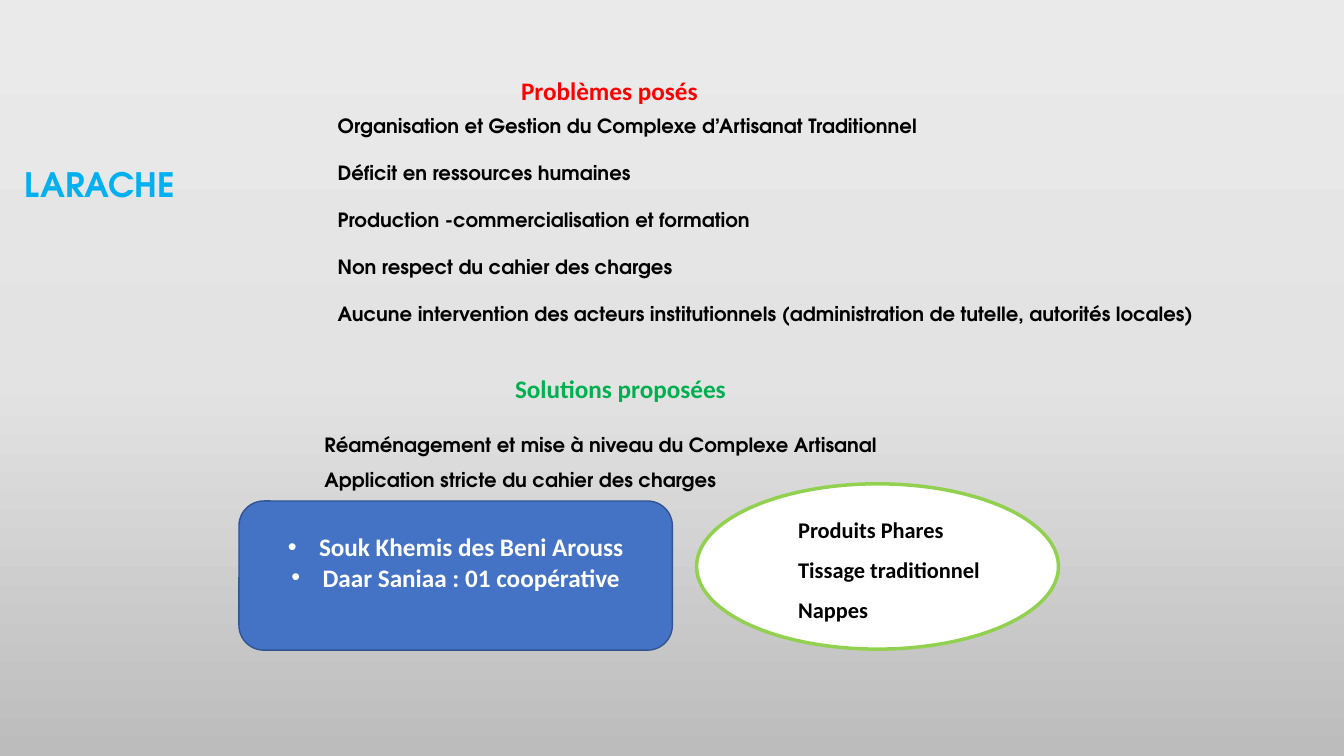
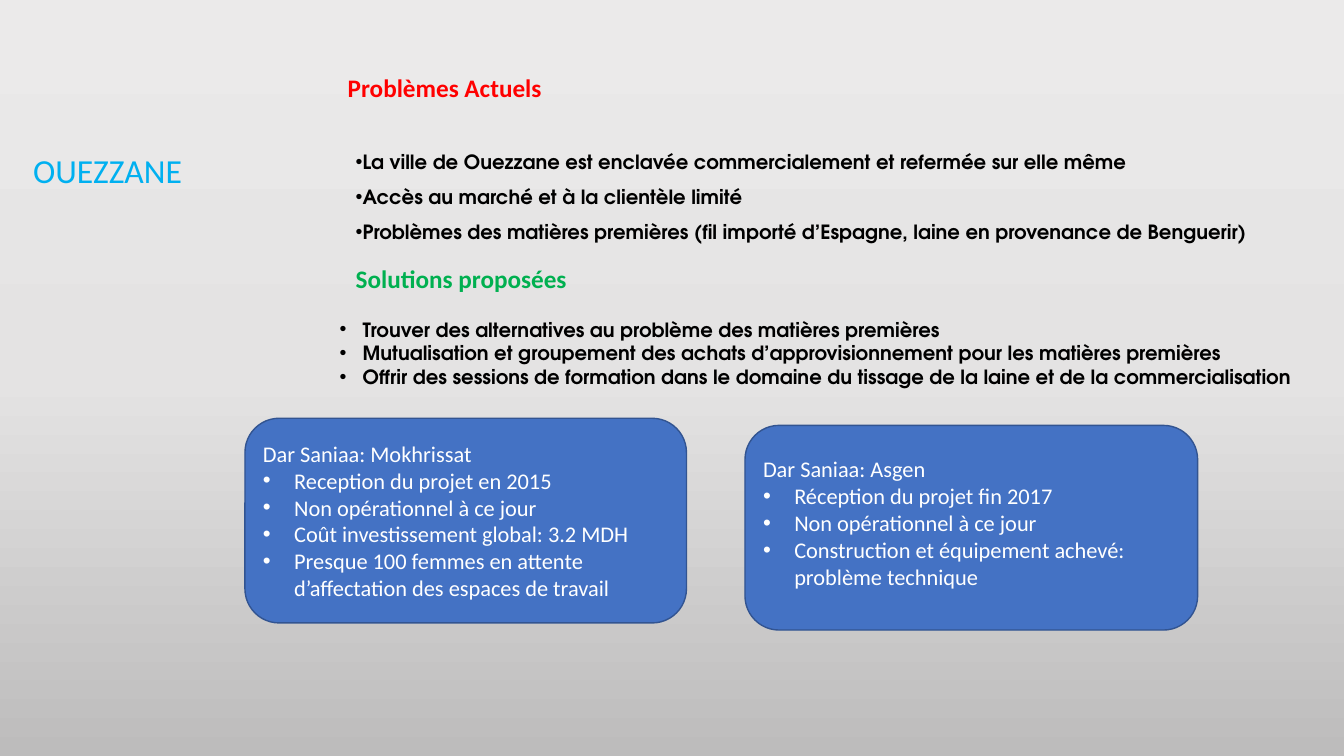
from copy import deepcopy
from lxml import etree
from pptx import Presentation, util as u
from pptx.dml.color import RGBColor
from pptx.enum import shapes, text
from pptx.oxml.ns import qn

SKY = RGBColor(0x00, 0xB0, 0xF0)
RED = RGBColor(0xFF, 0x00, 0x00)
GREEN = RGBColor(0x00, 0xB0, 0x50)
LIME = RGBColor(0x92, 0xD0, 0x50)
BLUE = RGBColor(0x44, 0x72, 0xC4)
NAVY = RGBColor(0x32, 0x54, 0x91)
BLACK = RGBColor(0x00, 0x00, 0x00)
WHITE = RGBColor(0xFF, 0xFF, 0xFF)
BACKDROP = [(0, RGBColor(0xEB, 0xEA, 0xEA)), (0.5, RGBColor(0xE4, 0xE3, 0xE3)),
            (1, RGBColor(0xBD, 0xBC, 0xBC))]
GEOMETRIC = "TeX Gyre Adventor"
PLAIN = "Calibri"

CITY = dict(font=dict(size=u.Pt(24), name=PLAIN), color=SKY,
            frame=dict(vertical_anchor=text.MSO_ANCHOR.MIDDLE))
PROBLEM = dict(font=dict(size=u.Pt(18), name=PLAIN, bold=True), color=RED)
SOLUTION = {**PROBLEM, "color": GREEN}
POINTS = dict(font=dict(size=u.Pt(14), name=GEOMETRIC, bold=True), color=BLACK)
AIRY = {**POINTS, "paragraph": dict(line_spacing=1.5)}
PRODUCTS = {**AIRY, "font": dict(size=u.Pt(16), name=PLAIN, bold=True),
            "frame": dict(vertical_anchor=text.MSO_ANCHOR.MIDDLE)}
CARD = dict(shape=shapes.MSO_SHAPE.ROUNDED_RECTANGLE, fill=BLUE, line=(NAVY, 1),
            font=dict(size=u.Pt(16), name=PLAIN), color=WHITE, bullet=0.31, heads=1,
            paragraph=dict(alignment=text.PP_ALIGN.LEFT),
            frame=dict(vertical_anchor=text.MSO_ANCHOR.MIDDLE,
                       margin_left=u.Inches(0.08), margin_right=u.Inches(0.08)))
MARKET = {**CARD, "font": PROBLEM["font"], "heads": 0,
          "paragraph": dict(alignment=text.PP_ALIGN.CENTER),
          "frame": dict(vertical_anchor=text.MSO_ANCHOR.MIDDLE,
                        margin_bottom=u.Inches(0.32))}
OVAL = dict(shape=shapes.MSO_SHAPE.OVAL, fill=WHITE, line=(LIME, 2.5))

LARACHE = [
    ({**CITY, "font": dict(size=u.Pt(24), name=GEOMETRIC, bold=True)},
     (1.12, 21.07, 14.62, 6.67), ["LARACHE"]),
    (PROBLEM, (38.03, 9.33, 21.08, 5.33), ["Problèmes posés"]),
    ({**POINTS, "gap": 16.8}, (24.38, 14.4, 67, 29.47), [
        "Organisation et Gestion du Complexe d’Artisanat Traditionnel",
        "Déficit en ressources humaines",
        "Production -commercialisation et formation",
        "Non respect du cahier des charges",
        "Aucune intervention des acteurs institutionnels (administration de tutelle, autorités locales)"]),
    (SOLUTION, (37.58, 48.67, 21.08, 5.33), ["Solutions proposées"]),
    (AIRY, (23.4, 55.07, 43.43, 10.13), [
        "Réaménagement et mise à niveau du Complexe Artisanal",
        "Application stricte du cahier des charges"]),
    (MARKET, (17.78, 66.27, 32.25, 19.73), [
        "Souk Khemis des Beni Arouss", "Daar Saniaa : 01 coopérative"]),
    (OVAL, (51.83, 64, 26.93, 21.87), []),
    (PRODUCTS, (58.65, 65.73, 21.08, 17.47), [
        "Produits Phares", "Tissage traditionnel", "Nappes"]),
]
OUEZZANE = [
    (CITY, (1.73, 19.2, 21.68, 6.67), ["OUEZZANE"]),
    (CARD, (18.23, 55.33, 32.85, 27.07), [
        "Dar Saniaa: Mokhrissat",
        "Reception du projet en 2015",
        "Non opérationnel à ce jour",
        "Coût investissement global: 3.2 MDH",
        "Presque 100 femmes en attente d’affectation des espaces de travail"]),
    ({**CARD, "frame": {**CARD["frame"], "margin_bottom": u.Inches(0.15)}},
     (55.43, 56.27, 33.68, 27.07), [
        "Dar Saniaa: Asgen",
        "Réception du projet fin 2017",
        "Non opérationnel à ce jour",
        "Construction et équipement achevé: problème technique"]),
    (PROBLEM, (25.13, 8.93, 21.08, 5.33), ["Problèmes Actuels"]),
    ({**AIRY, "bullet": 0}, (25.73, 17.6, 70.28, 14.93), [
        "La ville de Ouezzane est enclavée commercialement et refermée sur elle même",
        "Accès au marché et à la clientèle limité",
        "Problèmes des matières premières (fil importé d’Espagne, laine en provenance de Benguerir)"]),
    (SOLUTION, (25.73, 34.13, 57.3, 5.33), ["Solutions proposées"]),
    ({**POINTS, "bullet": 0.23}, (24.53, 41.33, 73.5, 10.67), [
        "Trouver des alternatives au problème des matières premières",
        "Mutualisation et groupement des achats d’approvisionnement pour les matières premières",
        "Offrir des sessions de formation dans le domaine du tissage de la laine et de la commercialisation"]),
]


def add_bullet(paragraph, indent):
    properties = paragraph._p.get_or_add_pPr()
    properties.set("marL", str(u.Inches(indent)))
    properties.set("indent", str(-u.Inches(indent)))
    etree.SubElement(properties, qn("a:buFont")).set("typeface", "Arial")
    etree.SubElement(properties, qn("a:buChar")).set("char", "•")


def add_item(slide, style, box, lines):
    sides = (prs.slide_width, prs.slide_height) * 2
    place = [int(side * share / 100) for side, share in zip(sides, box)]
    if "shape" in style:
        item = slide.shapes.add_shape(style["shape"], *place)
        item.shadow.inherit = False
        item.fill.solid()
        item.fill.fore_color.rgb = style["fill"]
        item.line.color.rgb, item.line.width = style["line"][0], u.Pt(style["line"][1])
    else:
        item = slide.shapes.add_textbox(*place)
    frame = item.text_frame
    frame.word_wrap = True
    for key, value in style.get("frame", {}).items():
        setattr(frame, key, value)
    for row, line in enumerate(lines):
        paragraph = frame.add_paragraph() if row else frame.paragraphs[0]
        if "bullet" in style and row >= style.get("heads", 0):
            add_bullet(paragraph, style["bullet"])
        if row and "gap" in style:
            paragraph.space_before = u.Pt(style["gap"])
        for key, value in style.get("paragraph", {}).items():
            setattr(paragraph, key, value)
        run = paragraph.add_run()
        run.text = line
        for key, value in style["font"].items():
            setattr(run.font, key, value)
        run.font.color.rgb = style["color"]


prs = Presentation()
prs.slide_width, prs.slide_height = u.Inches(13.33), u.Inches(7.5)

backdrop = prs.slide_master.background.fill
backdrop.gradient()
backdrop.gradient_angle = 270
stop_list = prs.slide_master.element.find(".//" + qn("p:bgPr")).find(".//" + qn("a:gsLst"))
while len(stop_list) < len(BACKDROP):
    stop_list.append(deepcopy(stop_list[0]))
for stop, (position, color) in zip(backdrop.gradient_stops, BACKDROP):
    stop.position, stop.color.rgb = position, color

for content in (LARACHE, OUEZZANE):
    slide = prs.slides.add_slide(prs.slide_layouts[6])
    for style, box, lines in content:
        add_item(slide, style, box, lines)

prs.save("out.pptx")
